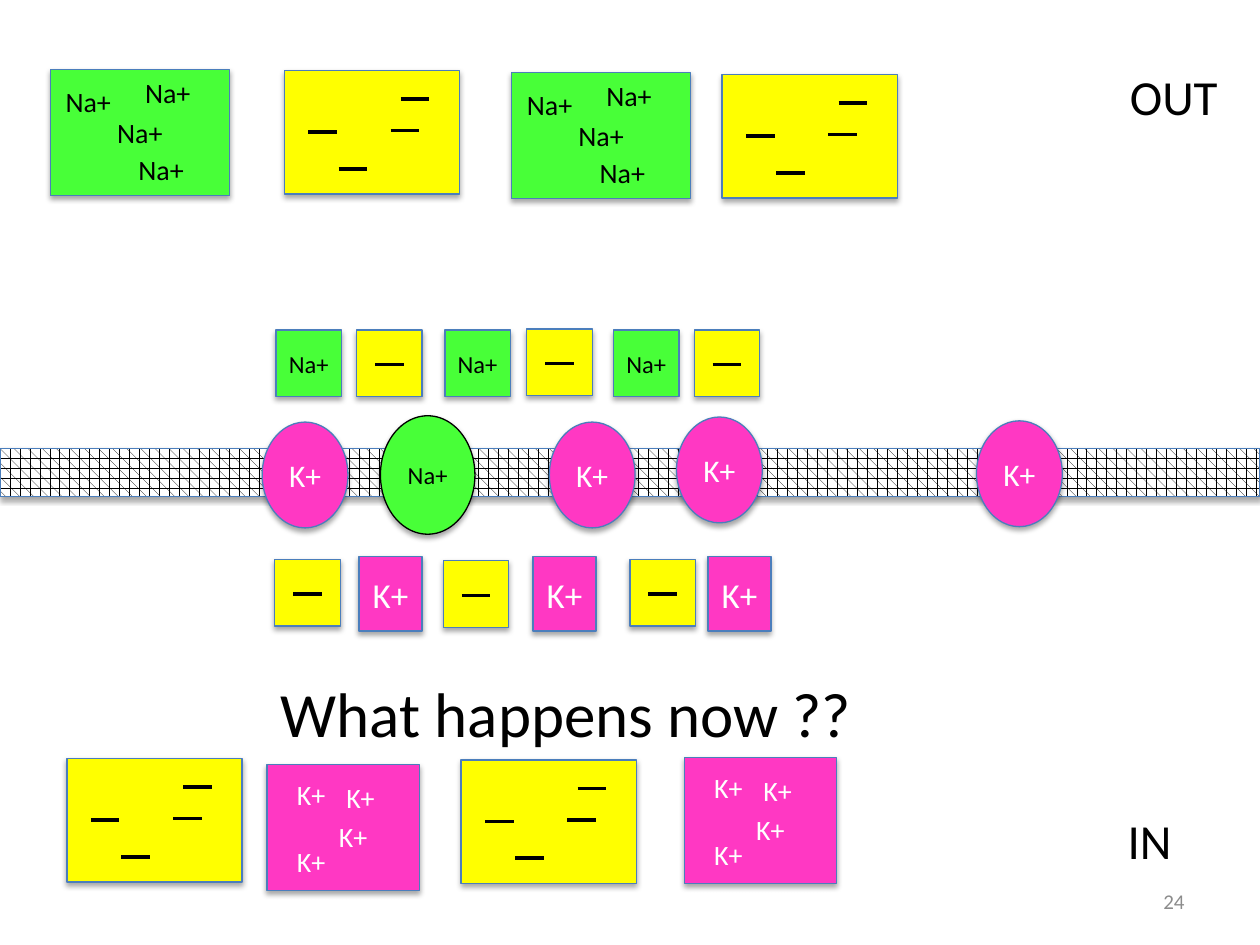
from lxml import etree
from pptx import Presentation
from pptx import util as u
from pptx.dml import color
from pptx.enum import dml, shapes, text
from pptx.oxml import ns

THEME = {
    "font": "Calibri",
    "black": "000000", "white": "FFFFFF", "grey": "8C8C8C", "outline": "4B7EBC",
    "sodium": "48FF38", "potassium": "FF38C3", "anion": "FFFF00",
    "heading": 36, "side": 28, "square_k": 20, "channel_k": 18,
    "cluster": 16, "small": 14, "number": 12,
}
SIDES = [("IN", (637.2, 459.4, 39.6, 41)), ("OUT", (638.6, 34.6, 64.8, 41))]
QUESTION = ("What happens now ??", (153.4, 381.6, 344.2, 51.1))
NUMBER = ("24", (516.2, 500.4, 167.8, 28.8))

MEMBRANE = (0, 256.3, 720, 27.4)
K_CHANNELS = [(386.6, 238.3), (149.8, 241.2), (313.9, 241.2), (558, 240.5)]
NA_CHANNEL = (217.4, 237.6, 54, 67.7)

NA_SQUARES = [(157.7, 188.6), (254.2, 188.6), (350.6, 188.6)]
K_SQUARES = [(205.2, 318.2), (304.6, 318.2), (404.6, 318.2)]
ANION_SQUARES = [(203.8, 188.6), (396.7, 188.6), (301, 188),
                 (360, 319.6), (157, 319.6), (253.4, 320.4)]

DASH_LENGTH = 16.3
CLUSTERS = {
    "sodium": {
        "at": [(28.8, 39.6), (292.4, 41.6)], "size": (102.2, 72), "centre": "Na+",
        "label": "Na+", "label_size": (56.2, 26.6), "ink": "black",
        "labels": [(47, 0), (43.2, 43.8), (1.6, 5)], "dashes": [],
    },
    "potassium": {
        "at": [(152.6, 437), (391, 432.9)], "size": (87.1, 72), "centre": "",
        "label": "K+", "label_size": (45.4, 26.6), "ink": "white",
        "labels": [(10, 4), (38.2, 5.5), (34, 27.8), (10, 42.2)], "dashes": [],
    },
    "anion": {
        "at": [(162.5, 40.3), (412.6, 42.6), (38.2, 433.4), (263.5, 434.2)],
        "size": (100.1, 70.6), "centre": "",
        "label": "", "label_size": (0, 0), "ink": "black", "labels": [],
        "dashes": [(66.6, 16.3), (60.7, 34.4), (13.7, 35.2), (31, 56.2)],
    },
}


def rgb(name):
    return color.RGBColor.from_string(THEME[name])


def write(shape, words, size, ink="black", align=text.PP_ALIGN.LEFT,
          anchor=text.MSO_ANCHOR.TOP, wrap=True, margin=None):
    frame = shape.text_frame
    frame.word_wrap = wrap
    frame.vertical_anchor = anchor
    if margin is not None:
        frame.margin_left = frame.margin_right = u.Pt(margin)
    paragraph = frame.paragraphs[0]
    paragraph.alignment = align
    run = paragraph.add_run()
    run.text = words
    run.font.name = THEME["font"]
    run.font.size = u.Pt(THEME[size])
    run.font.color.rgb = rgb(ink)


def add_label(parent, words, box, size, **text_format):
    write(parent.add_textbox(*map(u.Pt, box)), words, size, **text_format)


def add_shadow(shape):
    shape.shadow.inherit = False
    effects = shape._element.spPr.find(ns.qn("a:effectLst"))
    shadow = etree.SubElement(effects, ns.qn("a:outerShdw"), blurRad=str(u.Pt(3.1)),
                              dist=str(u.Pt(1.8)), dir="5400000", rotWithShape="0")
    tint = etree.SubElement(shadow, ns.qn("a:srgbClr"), val=THEME["black"])
    etree.SubElement(tint, ns.qn("a:alpha"), val="35000")


def add_block(parent, box, fill=None, kind=shapes.MSO_SHAPE.RECTANGLE, line="outline",
              words="", size="small", ink="black"):
    shape = parent.add_shape(kind, *map(u.Pt, box))
    if fill:
        shape.fill.solid()
        shape.fill.fore_color.rgb = rgb(fill)
    else:
        shape.fill.patterned()
        shape.fill.pattern = dml.MSO_PATTERN.PLAID
        shape.fill.fore_color.rgb = rgb("black")
        shape.fill.back_color.rgb = rgb("white")
    shape.line.color.rgb = rgb(line)
    shape.line.width = u.Pt(0.75)
    add_shadow(shape)
    if words:
        write(shape, words, size, ink=ink, align=text.PP_ALIGN.CENTER,
              anchor=text.MSO_ANCHOR.MIDDLE, margin=0)


def add_dash(parent, left, top):
    dash = parent.add_connector(shapes.MSO_CONNECTOR.STRAIGHT, u.Pt(left), u.Pt(top),
                                u.Pt(left + DASH_LENGTH), u.Pt(top))
    dash.line.color.rgb = rgb("black")
    dash.line.width = u.Pt(2)
    etree.SubElement(dash._element.spPr, ns.qn("a:effectLst"))


def add_cluster(parent, fill, cluster, left, top):
    group = parent.add_group_shape().shapes
    add_block(group, (left, top, *cluster["size"]), fill,
              words=cluster["centre"], size="cluster")
    for x, y in cluster["labels"]:
        add_label(group, cluster["label"], (left + x, top + y, *cluster["label_size"]),
                  "cluster", ink=cluster["ink"])
    for x, y in cluster["dashes"]:
        add_dash(group, left + x, top + y)


def main():
    presentation = Presentation()
    presentation.slide_width, presentation.slide_height = u.Pt(720), u.Pt(540)
    slide = presentation.slides.add_slide(presentation.slide_layouts.get_by_name("Blank"))
    canvas = slide.shapes
    oval = shapes.MSO_SHAPE.OVAL

    add_block(canvas, MEMBRANE)
    for words, box in SIDES:
        add_label(canvas, words, box, "side", wrap=False)
    for place in K_CHANNELS:
        add_block(canvas, (*place, 49, 60.5), "potassium", kind=oval,
                  words="K+", size="channel_k", ink="white")
    add_block(canvas, NA_CHANNEL, "sodium", kind=oval, line="black", words="Na+")

    for place in NA_SQUARES:
        add_block(canvas, (*place, 37.4, 38.2), "sodium", words="Na+")
    for place in K_SQUARES:
        add_block(canvas, (*place, 36, 42.5), "potassium",
                  words="K+", size="square_k", ink="white")
    for left, top in ANION_SQUARES:
        group = canvas.add_group_shape().shapes
        add_block(group, (left, top, 37.4, 38.2), "anion")
        add_dash(group, left + (37.4 - DASH_LENGTH) / 2, top + 19.8)

    add_label(canvas, *NUMBER, "number", ink="grey", align=text.PP_ALIGN.RIGHT,
              anchor=text.MSO_ANCHOR.MIDDLE)
    add_label(canvas, *QUESTION, "heading", wrap=False)
    for fill, cluster in CLUSTERS.items():
        for place in cluster["at"]:
            add_cluster(canvas, fill, cluster, *place)

    presentation.save("out.pptx")


if __name__ == "__main__":
    main()
